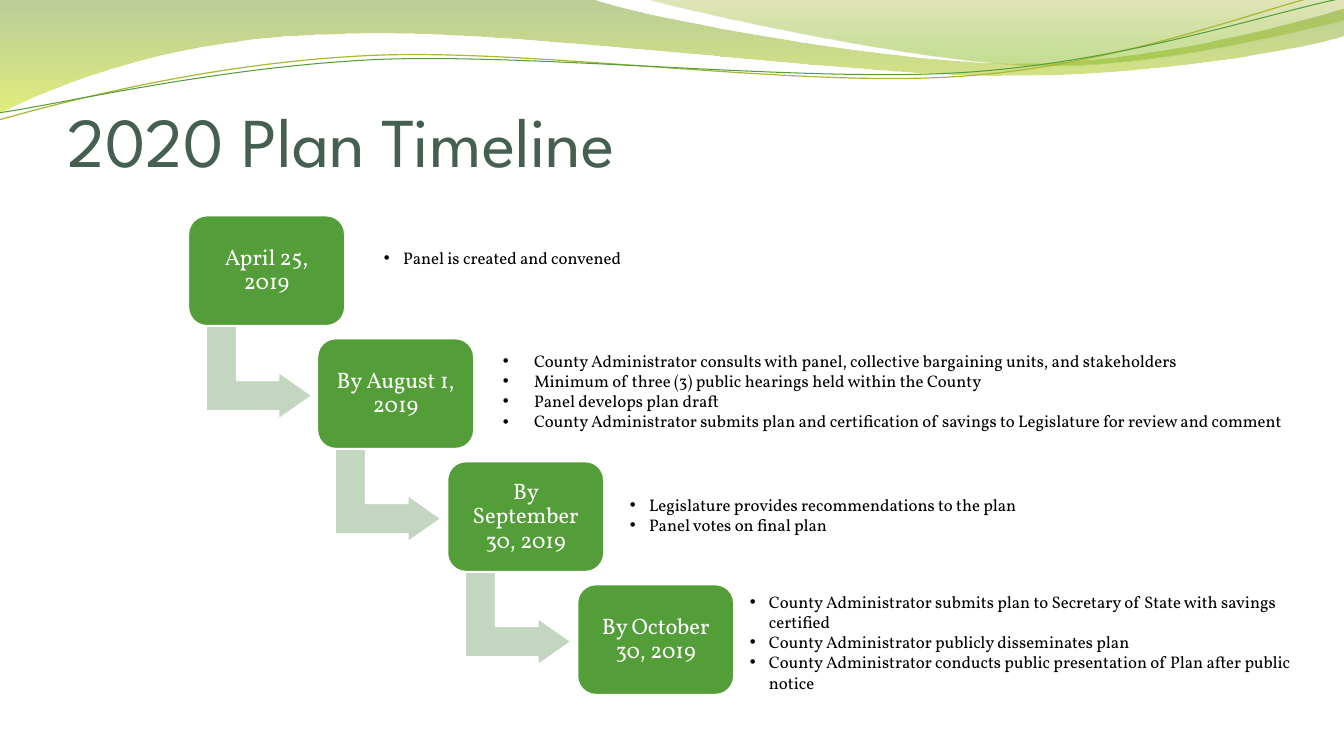
import math

import pptx
import pptx.dml.color
import pptx.enum.shapes
import pptx.enum.text
import pptx.oxml
import pptx.oxml.ns
import pptx.util

EMU_PER_PX = 9144  # 100 px to the inch
WAVE_TILT = 2.7  # degrees
BODY_FONT = "Vollkorn"

TITLE = "2020 Plan Timeline"

# Each step: date, place of its list (left, top, width, height), indent, points
STEPS = [
    ("April 25, 2019", (371, 241, 299, 30), 19,
     ["Panel is created and convened"]),
    ("By August 1, 2019", (489, 343, 804, 111), 31,
     ["County Administrator consults with panel, collective bargaining units, and stakeholders",
      "Minimum of three (3) public hearings held within the County",
      "Panel develops plan draft",
      "County Administrator submits plan and certification of savings to Legislature for review and comment"]),
    ("By September 30, 2019", (615, 486, 509, 50), 19,
     ["Legislature provides recommendations to the plan",
      "Panel votes on final plan"]),
    ("By October 30, 2019", (734, 582, 578, 128), 19,
     ["County Administrator submits plan to Secretary of State with savings certified",
      "County Administrator publicly disseminates plan",
      "County Administrator conducts public presentation of Plan after public notice"]),
]

# Wave outlines: a start point, then straight (1 point) or Bezier (3 points) segments
WAVE_FILLS = [
    {"start": (0, 0),
     "segments": [[(587, -1)],
                  [(634, 17), (884, 63), (1011, 63)],
                  [(1137, 63), (1277, 26), (1333, 9)],
                  [(1334, 36)],
                  [(1311, 44), (1159, 76), (994, 75)],
                  [(829, 75), (509, 28), (343, 34)],
                  [(172, 36), (61, 83), (-2, 113)]],
     "stops": [(0, "69921C", 45), (1, "CCE10F", 55)]},
    {"start": (638, -1),
     "segments": [[(679, 11), (909, 62), (1025, 65)],
                  [(1140, 69), (1282, 32), (1333, 21)],
                  [(1333, 0)]],
     "stops": [(0, "9BAA1A", 30), (0.8, "81BA16", 45)]},
]
WAVE_LINES = [
    {"start": (-1, 119), "center": (665, 57),
     "segments": [[(63, 101), (210, 62), (369, 55)],
                  [(527, 48), (789, 87), (949, 76)],
                  [(1110, 66), (1251, 8), (1330, -10)]],
     "color": "A9B733", "width": 0.85},
    {"start": (-1, 112), "center": (667, 59),
     "segments": [[(62, 103), (218, 66), (377, 59)],
                  [(537, 53), (796, 82), (955, 72)],
                  [(1114, 62), (1255, 14), (1333, -2)]],
     "color": "549E39", "width": 0.75},
]


def px(length):
    return pptx.util.Emu(round(length * EMU_PER_PX))


def rgb(color):
    return pptx.dml.color.RGBColor.from_string(color)


def set_format(target, values):
    for name, value in values.items():
        setattr(target, name, value)


def write(para, text, font, size, color):
    span = para.add_run()
    span.text = text
    set_format(span.font, {"name": font, "size": pptx.util.Pt(size)})
    span.font.color.rgb = rgb(color)


def turn(point, center, degrees):
    angle = math.radians(degrees)
    across, down = point[0] - center[0], point[1] - center[1]
    return (center[0] + across * math.cos(angle) - down * math.sin(angle),
            center[1] + across * math.sin(angle) + down * math.cos(angle))


def add_wave(page, wave, tilt=0):
    """Draw the outline; a tilted wave is laid level first, then rotated back."""
    points = [wave["start"], *(point for segment in wave["segments"] for point in segment)]
    points = [turn(point, wave.get("center", (0, 0)), tilt) for point in points]
    points = [(px(x), px(y)) for x, y in points]
    builder = page.shapes.build_freeform(*points[0])
    builder.add_line_segments(points[1:], close="stops" in wave)
    shape = builder.convert_to_shape()
    shape.shadow.inherit = False
    shape.rotation = -tilt % 360
    corners = iter(list(shape.element.spPr.iter(pptx.oxml.ns.qn("a:lnTo"))))
    for segment in wave["segments"]:
        nodes = [next(corners) for _ in segment]
        if len(nodes) == 3:
            curve = pptx.oxml.parse_xml(f'<a:cubicBezTo {pptx.oxml.ns.nsdecls("a")}/>')
            nodes[0].addprevious(curve)
            for node in nodes:
                curve.append(node[0])
                node.getparent().remove(node)
    return shape


def add_filled_wave(page, wave):
    shape = add_wave(page, wave)
    shape.line.fill.background()
    shape.fill.gradient()
    shape.fill.gradient_angle = 270
    for stop, (position, color, _) in zip(shape.fill.gradient_stops, wave["stops"]):
        stop.position = position
        stop.color.rgb = rgb(color)
    colors = shape.element.spPr.iter(pptx.oxml.ns.qn("a:srgbClr"))
    for node, (_, _, opacity) in zip(colors, wave["stops"]):
        node.append(pptx.oxml.parse_xml(
            f'<a:alpha {pptx.oxml.ns.nsdecls("a")} val="{opacity * 1000}"/>'))


def add_line_wave(page, wave):
    shape = add_wave(page, wave, WAVE_TILT)
    shape.fill.background()
    shape.line.color.rgb = rgb(wave["color"])
    shape.line.width = pptx.util.Pt(wave["width"])


def add_block(page, kind, place, color, adjustments):
    block = page.shapes.add_shape(kind, *map(px, place))
    block.shadow.inherit = False
    block.fill.solid()
    block.fill.fore_color.rgb = rgb(color)
    block.line.color.rgb = rgb("FFFFFF")
    block.line.width = pptx.util.Pt(1)
    for index, value in enumerate(adjustments):
        block.adjustments[index] = value
    return block


def add_date(page, date, left, top):
    box = add_block(page, pptx.enum.shapes.MSO_SHAPE.ROUNDED_RECTANGLE,
                    (left, top, 155, 109), "549E39", [0.167])
    frame = box.text_frame
    set_format(frame, {
        "word_wrap": True, "vertical_anchor": pptx.enum.text.MSO_ANCHOR.MIDDLE,
        "margin_left": px(7), "margin_top": px(7),
        "margin_right": px(7), "margin_bottom": px(7)})
    para = frame.paragraphs[0]
    set_format(para, {"alignment": pptx.enum.text.PP_ALIGN.CENTER, "line_spacing": 0.9})
    write(para, date, BODY_FONT, 16, "FFFFFF")


def add_points(page, place, indent, points):
    frame = page.shapes.add_textbox(*map(px, place)).text_frame
    set_format(frame, {"word_wrap": True,
                       "auto_size": pptx.enum.text.MSO_AUTO_SIZE.SHAPE_TO_FIT_TEXT})
    for index, point in enumerate(points):
        para = frame.add_paragraph() if index else frame.paragraphs[0]
        write(para, point, BODY_FONT, 12, "000000")
        properties = para._p.get_or_add_pPr()
        properties.set("marL", str(px(indent)))
        properties.set("indent", str(-px(indent)))
        for bullet in ('buFont {} typeface="Arial"', 'buChar {} char="•"'):
            properties.append(pptx.oxml.parse_xml(
                f'<a:{bullet.format(pptx.oxml.ns.nsdecls("a"))}/>'))


def add_title(page):
    title = page.shapes.title
    set_format(title, {"left": px(67), "top": px(77), "width": px(1200), "height": px(103)})
    frame = title.text_frame
    set_format(frame, {
        "word_wrap": True, "auto_size": pptx.enum.text.MSO_AUTO_SIZE.NONE,
        "vertical_anchor": pptx.enum.text.MSO_ANCHOR.BOTTOM,
        "margin_left": 0, "margin_top": px(5), "margin_right": 0, "margin_bottom": 0})
    para = frame.paragraphs[0]
    para.alignment = pptx.enum.text.PP_ALIGN.LEFT
    write(para, TITLE, "League Spartan", 50, "455F51")


def main():
    deck = pptx.Presentation()
    set_format(deck, {"slide_width": px(1333.33), "slide_height": px(750)})
    page = deck.slides.add_slide(deck.slide_layouts[5])
    for wave in WAVE_FILLS:
        add_filled_wave(page, wave)
    for wave in WAVE_LINES:
        add_line_wave(page, wave)
    add_title(page)
    for index, (date, place, indent, points) in enumerate(STEPS):
        left, top = 187 + 386 * index // 3, 214 + 122 * index
        if index < len(STEPS) - 1:
            arrow = add_block(page, pptx.enum.shapes.MSO_SHAPE.BENT_UP_ARROW,
                              (left + 24, top + 103, 92, 105), "C3D6BF",
                              [0.328, 0.25, 0.358])
            arrow.rotation = 90
        add_date(page, date, left, top)
        add_points(page, place, indent, points)
    deck.save("out.pptx")


if __name__ == "__main__":
    main()
